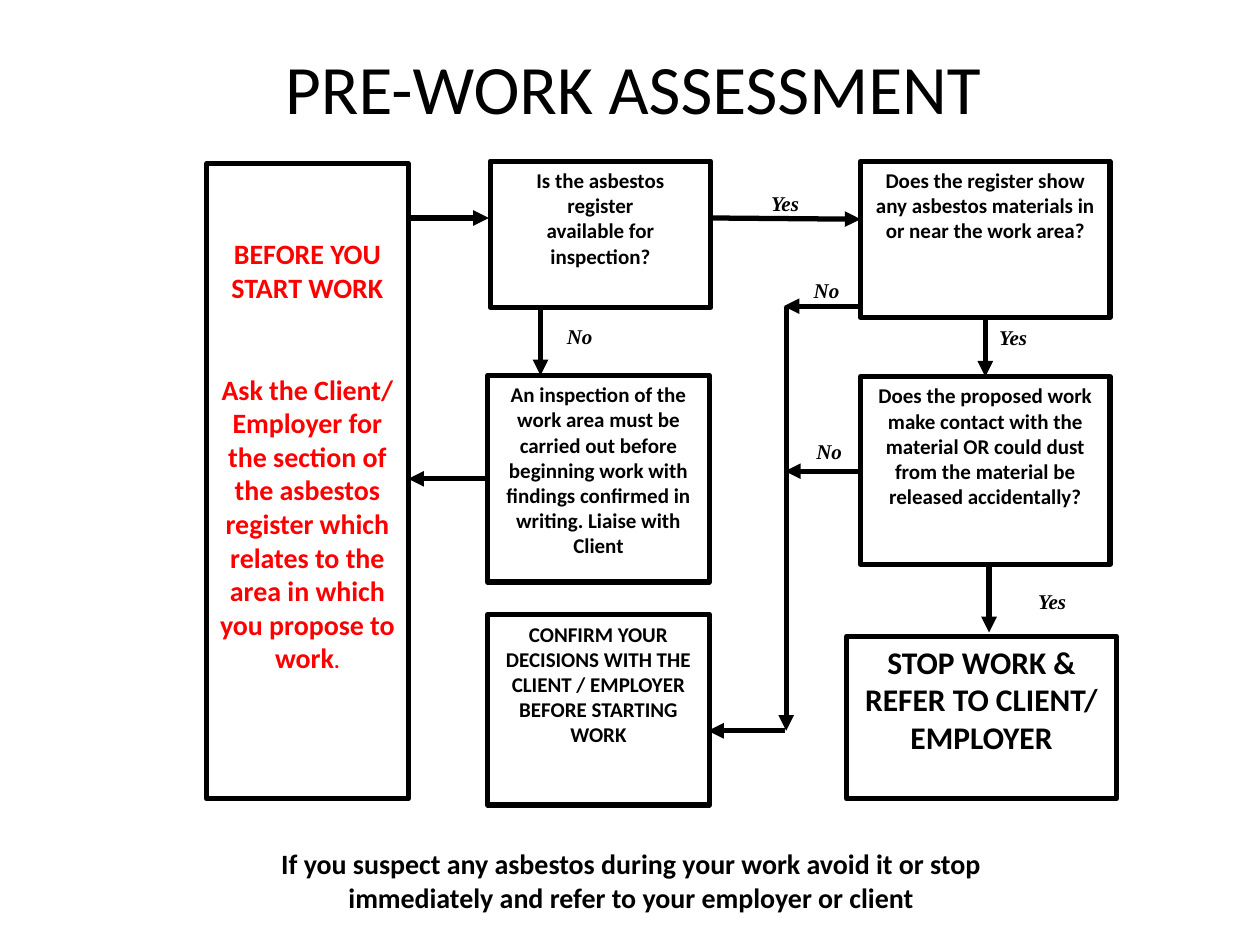
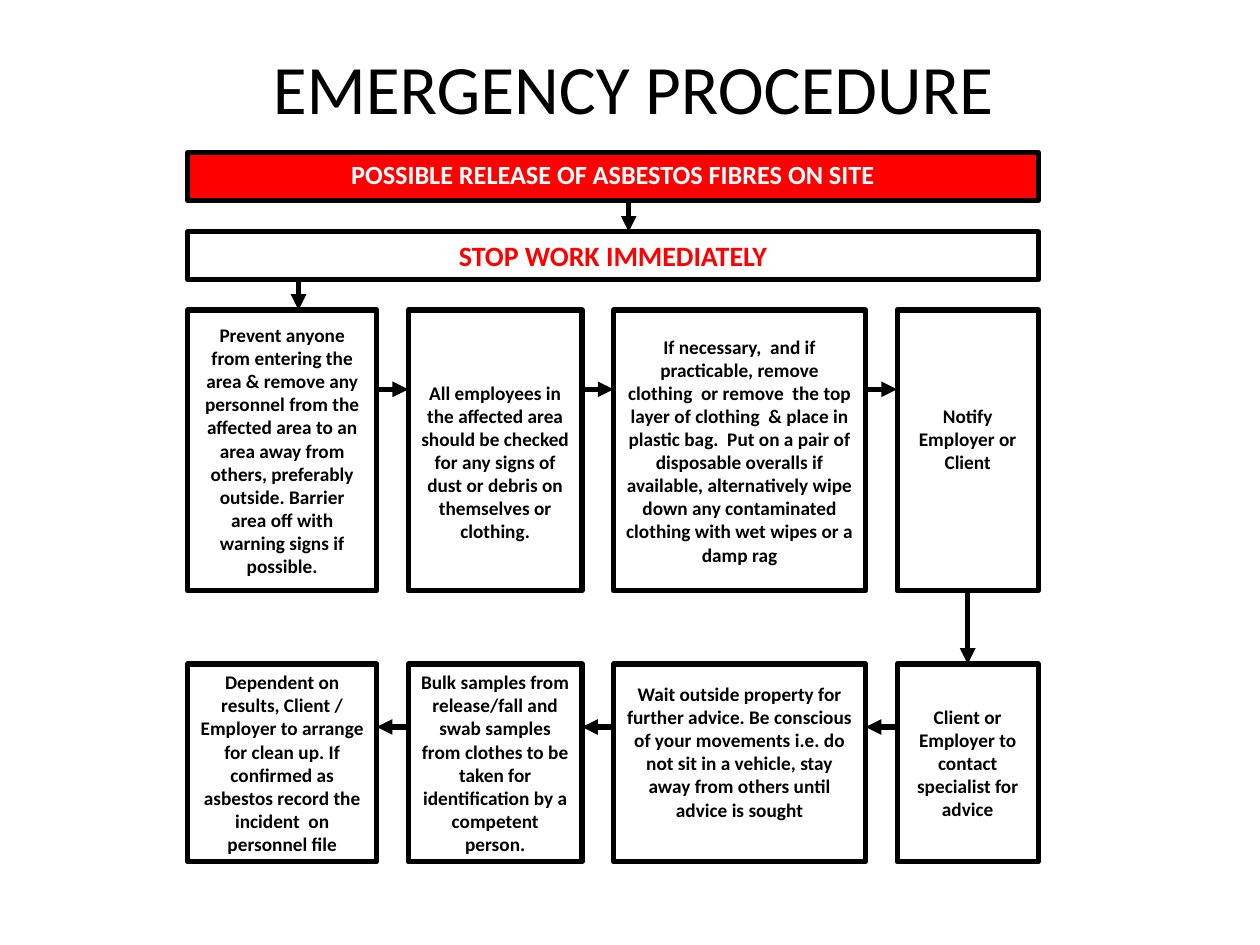
import pptx
import pptx.util
import pptx.dml.color
import pptx.enum.shapes
import pptx.enum.text
import pptx.oxml.ns
from lxml import etree

Inches = pptx.util.Inches
Pt = pptx.util.Pt
RGBColor = pptx.dml.color.RGBColor
Anchor = pptx.enum.text.MSO_ANCHOR

BLACK = RGBColor(0x00, 0x00, 0x00)
WHITE = RGBColor(0xFF, 0xFF, 0xFF)
RED = RGBColor(0xFF, 0x00, 0x00)
STROKE = Pt(3)


def write(shape, paras, size, color=BLACK, font="Calibri", bold=True,
          italic=False, anchor=Anchor.TOP, pads=(0.05, 0.05), gap=0):
    """Fill a shape with centred paragraphs; pads are top and bottom insets."""
    frame = shape.text_frame
    frame.word_wrap = True
    frame.vertical_anchor = anchor
    frame.margin_left = frame.margin_right = Inches(0.1)
    frame.margin_top, frame.margin_bottom = map(Inches, pads)
    for i, text in enumerate(paras):
        para = frame.add_paragraph() if i else frame.paragraphs[0]
        para.text = text
        para.alignment = pptx.enum.text.PP_ALIGN.CENTER
        if i and gap:
            para.space_before = Pt(gap)
        para.font.size = Pt(size)
        para.font.name = font
        para.font.bold = bold
        para.font.italic = italic
        para.font.color.rgb = color


def label(slide, left, top, width, height, text, size, **style):
    shape = slide.shapes.add_textbox(*map(Inches, (left, top, width, height)))
    write(shape, [text], size, **style)


def box(slide, left, top, width, height, paras, size, fill=WHITE, **style):
    shape = slide.shapes.add_shape(
        pptx.enum.shapes.MSO_SHAPE.RECTANGLE,
        *map(Inches, (left, top, width, height)))
    shape.shadow.inherit = False
    shape.fill.solid()
    shape.fill.fore_color.rgb = fill
    shape.line.color.rgb = BLACK
    shape.line.width = STROKE
    write(shape, paras, size, **style)
    return shape


def arrow(slide, x1, y1, x2, y2):
    line = slide.shapes.add_connector(
        pptx.enum.shapes.MSO_CONNECTOR.STRAIGHT,
        *map(Inches, (x1, y1, x2, y2)))
    line.line.color.rgb = BLACK
    line.line.width = STROKE
    qn = pptx.oxml.ns.qn
    etree.SubElement(line.line._get_or_add_ln(), qn("a:tailEnd"), type="triangle")
    etree.SubElement(line._element.spPr, qn("a:effectLst"))


def start(deck, title):
    """Add a blank slide with the shared title."""
    slide = deck.slides.add_slide(deck.slide_layouts[6])
    label(slide, 0.5, 0.3, 9.05, 0.78, title, 39.6, bold=False,
          anchor=Anchor.MIDDLE)
    return slide


def assess(deck):
    slide = start(deck, "PRE-WORK ASSESSMENT")
    before = box(slide, 1.64, 1.3, 1.6, 5.04, [
        "BEFORE YOU START WORK",
        "Ask the Client/ Employer for the section of the asbestos register "
        "which relates to the area in which you propose to work",
    ], 16, color=RED, pads=(0.58, 0.05), gap=39)
    stop = before.text_frame.paragraphs[-1].add_run()
    stop.text = "."
    stop.font.size = Pt(12)

    steps = [
        (3.89, 1.28, 1.75, 1.16, ["Is the asbestos register",
                                  "available for inspection?"], 12),
        (3.87, 2.98, 1.76, 1.64, [
            "An inspection of the work area must be carried out before "
            "beginning work with findings confirmed in writing. Liaise with "
            "Client"], 12),
        (3.87, 4.88, 1.76, 1.51, [
            "CONFIRM YOUR DECISIONS WITH THE CLIENT / EMPLOYER BEFORE "
            "STARTING WORK"], 12),
        (6.83, 1.28, 1.98, 1.24, [
            "Does the register show any asbestos materials in or near the "
            "work area?"], 12),
        (6.83, 2.99, 1.98, 1.49, [
            "Does the proposed work make contact with the material OR could "
            "dust from the material be released accidentally?"], 12),
        (6.72, 5.05, 2.14, 1.29, ["STOP WORK & REFER TO CLIENT/ EMPLOYER"], 18),
    ]
    for step in steps:
        box(slide, *step)

    for ends in [
        (3.26, 1.73, 3.88, 1.73), (5.64, 1.73, 6.83, 1.74),
        (4.29, 2.44, 4.29, 2.98), (3.87, 3.8, 3.24, 3.8),
        (7.82, 2.51, 7.82, 2.99), (7.85, 4.48, 7.85, 5.02),
        (6.85, 2.43, 6.22, 2.43), (6.85, 3.74, 6.23, 3.74),
        (6.24, 2.44, 6.24, 5.8), (6.23, 5.8, 5.62, 5.8),
    ]:
        arrow(slide, *ends)

    for left, top, word in [
        (5.92, 1.46, "Yes"), (7.73, 2.53, "Yes"), (8.04, 4.62, "Yes"),
        (4.29, 2.52, "No"), (6.25, 2.15, "No"), (6.27, 3.43, "No"),
    ]:
        label(slide, left, top, 0.62, 0.38, word, 12,
              font="Times New Roman", italic=True)

    label(slide, 1.66, 6.67, 6.7, 0.61,
          "If you suspect any asbestos during your work avoid it or stop "
          "immediately and refer to your employer or client", 16)


def respond(deck):
    slide = start(deck, "EMERGENCY PROCEDURE")
    left, gap = 1.49, 0.25
    widths = [1.5, 1.38, 2, 1.12]
    lefts = [left + sum(widths[:i]) + gap * i for i in range(len(widths))]
    span = sum(widths) + gap * (len(widths) - 1)
    even, low, high = (0.05, 0.05), (0.23, 0.05), (0.05, 0.23)
    upper, lower = (2.46, 2.23), (5.27, 1.57)

    box(slide, left, 1.21, span, 0.38,
        ["POSSIBLE RELEASE OF ASBESTOS FIBRES ON SITE"], 15,
        fill=RED, color=WHITE)
    box(slide, left, 1.84, span, 0.38, ["STOP WORK IMMEDIATELY"], 16, color=RED)

    first = [
        ("Prevent anyone from entering the area & remove any personnel from "
         "the affected area to an area away from others, preferably outside. "
         "Barrier area off with warning signs if possible.", even),
        ("All employees in the affected area should be checked for any signs "
         "of dust or debris on themselves or clothing.", low),
        ("If necessary,  and if practicable, remove clothing  or remove  the "
         "top layer of clothing  & place in plastic bag.  Put on a pair of "
         "disposable overalls if available, alternatively wipe down any "
         "contaminated clothing with wet wipes or a damp rag", even),
        ("Notify Employer or Client", high),
    ]
    second = [
        ("Dependent on results, Client / Employer to arrange for clean up. If "
         "confirmed as asbestos record the incident  on personnel file", even),
        ("Bulk samples from release/fall and swab samples from clothes to be "
         "taken for identification by a competent person.", even),
        ("Wait outside property for further advice. Be conscious of your "
         "movements i.e. do not sit in a vehicle, stay away from others until "
         "advice is sought", high),
        ("Client or Employer to contact specialist for advice", even),
    ]
    for (top, height), row in ((upper, first), (lower, second)):
        for x, width, (text, pads) in zip(lefts, widths, row):
            box(slide, x, top, width, height, [text], 11,
                anchor=Anchor.MIDDLE, pads=pads)

    for x in lefts[1:]:
        arrow(slide, x - gap, 3.09, x, 3.09)
        arrow(slide, x, 5.77, x - gap, 5.77)
    arrow(slide, 4.99, 1.59, 4.99, 1.84)
    arrow(slide, 2.37, 2.21, 2.37, upper[0])
    turn = lefts[-1] + widths[-1] / 2
    arrow(slide, turn, sum(upper), turn, lower[0])


def main():
    deck = pptx.Presentation()
    deck.slide_width, deck.slide_height = Inches(10), Inches(7.5)
    assess(deck)
    respond(deck)
    deck.save("out.pptx")


if __name__ == "__main__":
    main()
